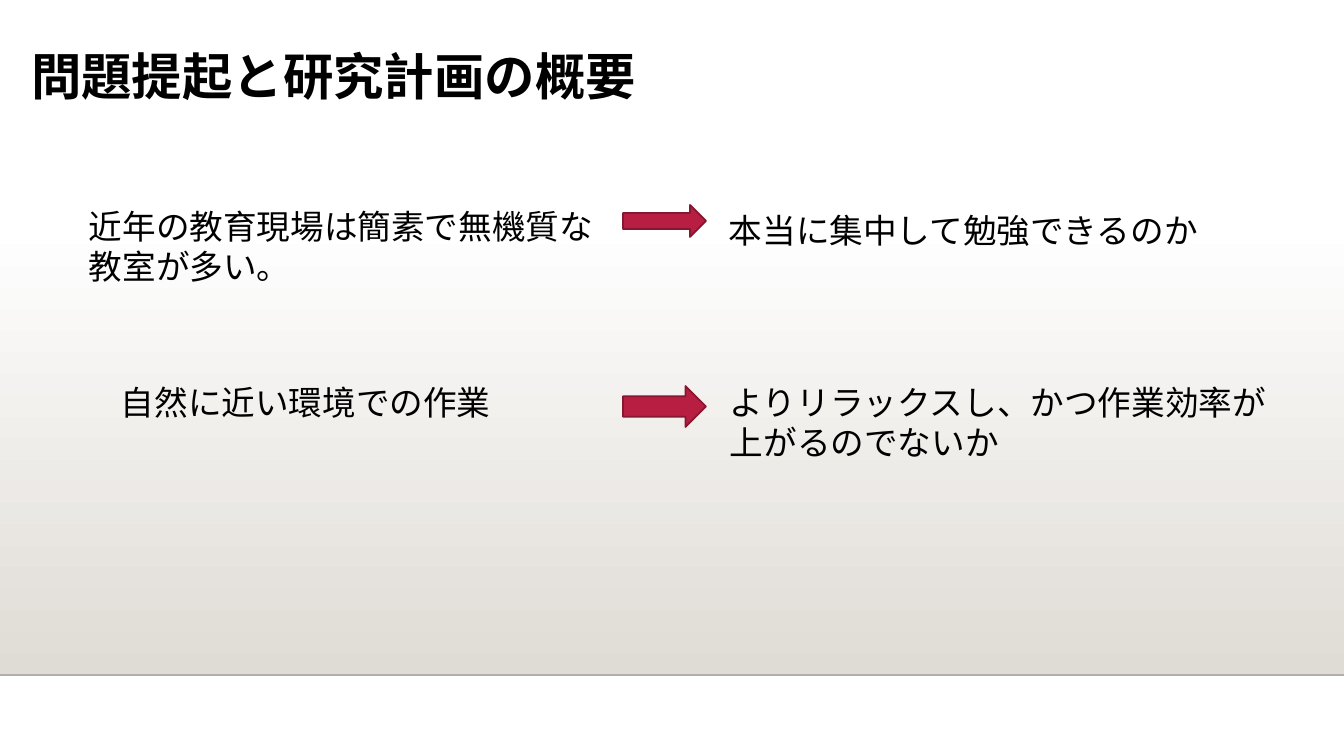
import pptx
import pptx.util
import pptx.dml.color
import pptx.enum.shapes
import pptx.enum.text
import pptx.oxml.xmlchemy

RGBColor = pptx.dml.color.RGBColor
BLACK = RGBColor(0x00, 0x00, 0x00)
WHITE = RGBColor(0xFF, 0xFF, 0xFF)
SAND = RGBColor(0xDF, 0xDB, 0xD5)
EDGE = RGBColor(0xB2, 0xAF, 0xAA)
RED = RGBColor(0xB7, 0x1E, 0x42)
WINE = RGBColor(0x87, 0x16, 0x31)

WIDE, HIGH = 1344, 756
BAND_TOP, BAND_END = 223, 675
ARROW_LEFT, ARROW_WIDE = 623, 83


def px(count):
    return pptx.util.Emu(round(count * 914400 / 100.8))


class Deck:
    font = "Cabin"

    def __init__(self):
        self.prs = pptx.Presentation()
        self.prs.slide_width = px(WIDE)
        self.prs.slide_height = px(HIGH)
        self.slide = self.prs.slides.add_slide(self.prs.slide_layouts[5])
        self.shapes = self.slide.shapes

    def label(self, box, words, size, bold=False, wrap=True):
        frame = box.text_frame
        frame.word_wrap = wrap
        frame.auto_size = pptx.enum.text.MSO_AUTO_SIZE.SHAPE_TO_FIT_TEXT
        frame.vertical_anchor = pptx.enum.text.MSO_ANCHOR.TOP
        para = frame.paragraphs[0]
        para.alignment = pptx.enum.text.PP_ALIGN.LEFT
        run = para.add_run()
        run.text = words
        run.font.name = self.font
        run.font.size = pptx.util.Pt(size)
        run.font.bold = bold
        run.font.color.rgb = BLACK

    def title(self, words, left, top, width, height):
        box = self.shapes.title
        box.left, box.top = px(left), px(top)
        box.width, box.height = px(width), px(height)
        self.label(box, words, 36, bold=True)

    def text(self, words, left, top, width, height, wrap=True):
        box = self.shapes.add_textbox(px(left), px(top), px(width), px(height))
        self.label(box, words, 24, wrap=wrap)

    def shape(self, kind, left, top, width, height):
        item = self.shapes.add_shape(
            kind, px(left), px(top), px(width), px(height))
        item.shadow.inherit = False
        return item

    def band(self, top, end):
        item = self.shape(pptx.enum.shapes.MSO_SHAPE.RECTANGLE,
                          0, top, WIDE, end - top)
        item.line.fill.background()
        item.fill.gradient()
        item.fill.gradient_angle = 270
        for stop, color in zip(item.fill.gradient_stops, (WHITE, SAND)):
            stop.color.rgb = color

    def rule(self, y):
        line = self.shapes.add_connector(
            pptx.enum.shapes.MSO_CONNECTOR.STRAIGHT, 0, px(y), px(WIDE), px(y))
        line.line.color.rgb = EDGE
        line.line.width = pptx.util.Pt(1)
        line._element.spPr.append(
            pptx.oxml.xmlchemy.OxmlElement("a:effectLst"))

    def arrow(self, top, height):
        item = self.shape(pptx.enum.shapes.MSO_SHAPE.RIGHT_ARROW,
                          ARROW_LEFT, top, ARROW_WIDE, height)
        item.fill.solid()
        item.fill.fore_color.rgb = RED
        item.line.color.rgb = WINE
        item.line.width = pptx.util.Pt(1.25)


def main():
    deck = Deck()
    deck.band(BAND_TOP, BAND_END)
    deck.rule(BAND_END)
    deck.title("問題提起と研究計画の概要", 21, 40, 647, 72)
    deck.text("近年の教育現場は簡素で無機質な教室が多い。", 79, 201, 544, 132)
    deck.arrow(205, 32)
    deck.text("本当に集中して勉強できるのか", 719, 205, 495, 50, wrap=False)
    deck.text("自然に近い環境での作業", 111, 377, 444, 50)
    deck.text("よりリラックスし、かつ作業効率が上がるのでないか", 720, 377, 560, 92)
    deck.arrow(386, 41)
    deck.prs.save("out.pptx")


if __name__ == "__main__":
    main()
